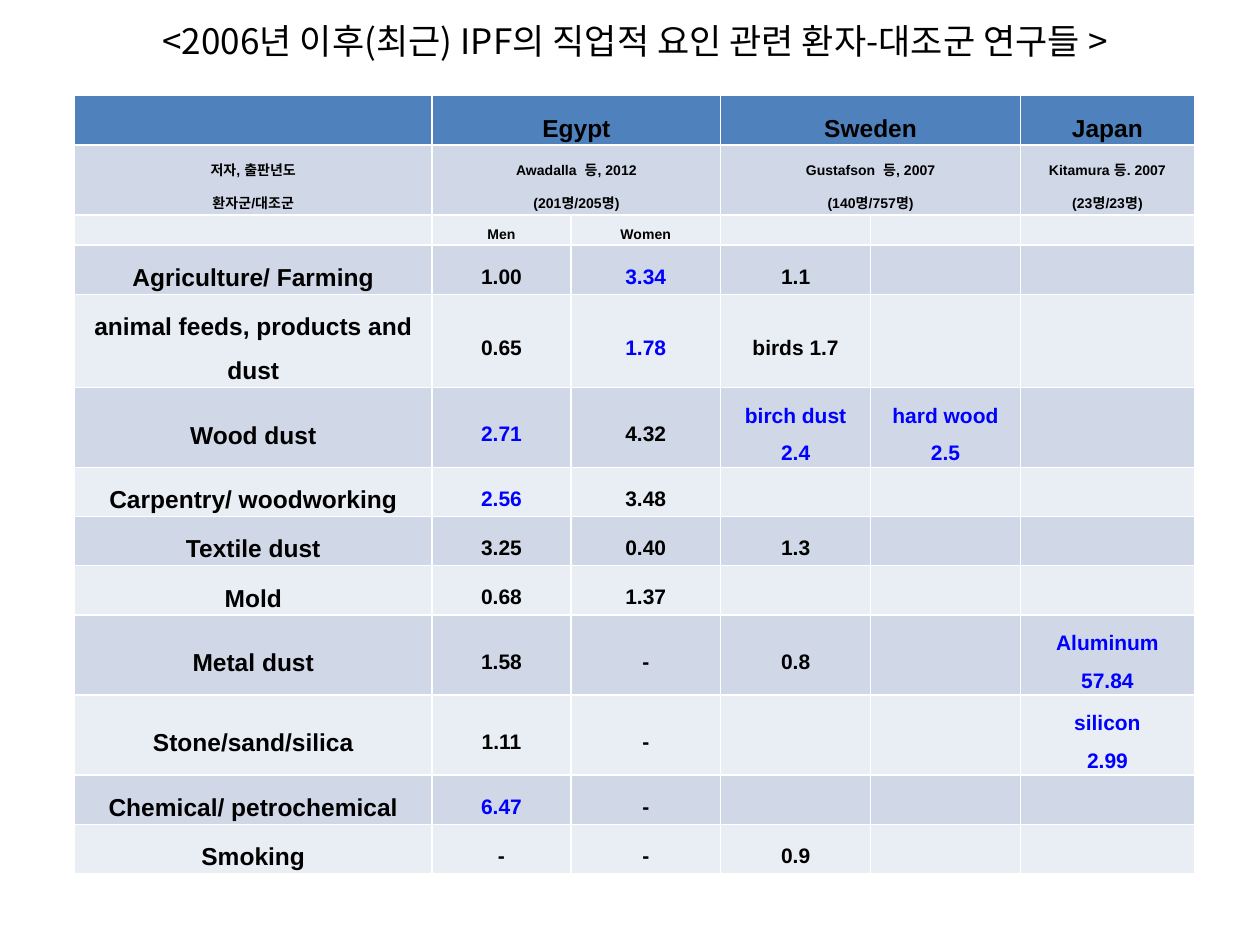
from lxml import etree
from pptx import Presentation
from pptx import util as u
from pptx.dml.color import RGBColor
from pptx.enum import text
from pptx.oxml.ns import qn

COLORS = {"header": "4F81BD", "odd": "D0D8E8", "even": "E9EDF4",
          "ink": "000000", "significant": "0000FF"}
KOREAN_FONT = "Noto Sans CJK KR"
TITLE = "<2006년 이후(최근) IPF의 직업적 요인 관련 환자-대조군 연구들 >"

# Values starting with * are significant; a line break starts a new paragraph.
ROWS = [
    ["", "Egypt", "", "Sweden", "", "Japan"],
    ["저자, 출판년도\n환자군/대조군", "Awadalla  등, 2012\n(201명/205명)", "",
     "Gustafson  등, 2007\n(140명/757명)", "", "Kitamura 등. 2007\n(23명/23명)"],
    ["", "Men", "Women", "", "", ""],
    ["Agriculture/ Farming", "1.00", "*3.34", "1.1", "", ""],
    ["animal feeds, products and dust", "0.65", "*1.78", "birds 1.7", "", ""],
    ["Wood dust", "*2.71", "4.32", "*birch dust\n2.4", "*hard wood\n2.5", ""],
    ["Carpentry/ woodworking", "*2.56", "3.48", "", "", ""],
    ["Textile dust", "3.25", "0.40", "1.3", "", ""],
    ["Mold", "0.68", "1.37", "", "", ""],
    ["Metal dust", "1.58", "-", "0.8", "", "*Aluminum\n57.84"],
    ["Stone/sand/silica", "1.11", "-", "", "", "*silicon\n2.99"],
    ["Chemical/ petrochemical", "*6.47", "-", "", "", ""],
    ["Smoking", "-", "-", "0.9", "", ""],
]
COLUMN_WIDTHS = [2.84, 1.1, 1.19, 1.19, 1.19, 1.38]
ROW_HEIGHTS = [0.31, 0.37, 0.21, 0.31, 0.62, 0.54, 0.31,
               0.31, 0.31, 0.54, 0.54, 0.31, 0.31]
TABLE_BOX = [u.Inches(n) for n in (0.59, 0.76, 8.9, 6.5)]
TITLE_BOX = {"left": 0.75, "top": 0.13, "width": 8.58, "height": 0.38}
CELL_MARGINS = {"margin_left": 0.04, "margin_right": 0.04,
                "margin_top": 0.02, "margin_bottom": 0.02}
HEADER_ROW, STUDY_ROW, SEX_ROW = range(3)
COUNTRY_SPANS = [(1, 2), (3, 4)]


def style_run(run, latin, size, color, bold):
    run.font.name, run.font.size, run.font.bold = latin, u.Pt(size), bold
    run.font.color.rgb = RGBColor.from_string(COLORS[color])
    east_asian = etree.SubElement(run.font._element, qn("a:ea"))
    east_asian.set("typeface", KOREAN_FONT)


def font_size(row, column):
    if row in (STUDY_ROW, SEX_ROW):
        return 8
    return 14 if row == HEADER_ROW or column == 0 else 12


def fill_cell(cell, row, column, value):
    band = "header" if row == HEADER_ROW else "odd" if row % 2 else "even"
    cell.fill.solid()
    cell.fill.fore_color.rgb = RGBColor.from_string(COLORS[band])
    for margin, inches in CELL_MARGINS.items():
        setattr(cell, margin, u.Inches(inches))
    cell.vertical_anchor = (text.MSO_ANCHOR.TOP if row in (STUDY_ROW, SEX_ROW)
                            else text.MSO_ANCHOR.MIDDLE)
    cell.text = value.lstrip("*")
    color = "significant" if value.startswith("*") else "ink"
    for paragraph in cell.text_frame.paragraphs:
        paragraph.alignment = text.PP_ALIGN.CENTER
        if not value:
            # An empty cell must not stretch its row
            etree.SubElement(paragraph._p, qn("a:endParaRPr")).set("sz", "800")
            continue
        paragraph.line_spacing = 1.6
        for run in paragraph.runs:
            style_run(run, "Arial", font_size(row, column), color, True)


def add_study_table(slide):
    frame = slide.shapes.add_table(len(ROWS), len(COLUMN_WIDTHS), *TABLE_BOX)
    table = frame.table
    for column, width in zip(table.columns, COLUMN_WIDTHS):
        column.width = u.Inches(width)
    for table_row, height in zip(table.rows, ROW_HEIGHTS):
        table_row.height = u.Inches(height)
    frame.height = TABLE_BOX[3]
    for row, values in enumerate(ROWS):
        for column, value in enumerate(values):
            fill_cell(table.cell(row, column), row, column, value)
    for row in (HEADER_ROW, STUDY_ROW):
        for first, last in COUNTRY_SPANS:
            table.cell(row, first).merge(table.cell(row, last))


def add_title(slide):
    title = slide.shapes.title
    for side, inches in TITLE_BOX.items():
        setattr(title, side, u.Inches(inches))
    title.text_frame.text = TITLE
    title.text_frame.vertical_anchor = text.MSO_ANCHOR.MIDDLE
    heading = title.text_frame.paragraphs[0]
    heading.alignment = text.PP_ALIGN.CENTER
    style_run(heading.runs[0], KOREAN_FONT, 20, "ink", False)


def main():
    deck = Presentation()
    deck.slide_width, deck.slide_height = u.Inches(10), u.Inches(7.5)
    slide = deck.slides.add_slide(deck.slide_layouts[5])
    add_study_table(slide)
    add_title(slide)
    deck.save("out.pptx")


if __name__ == "__main__":
    main()
